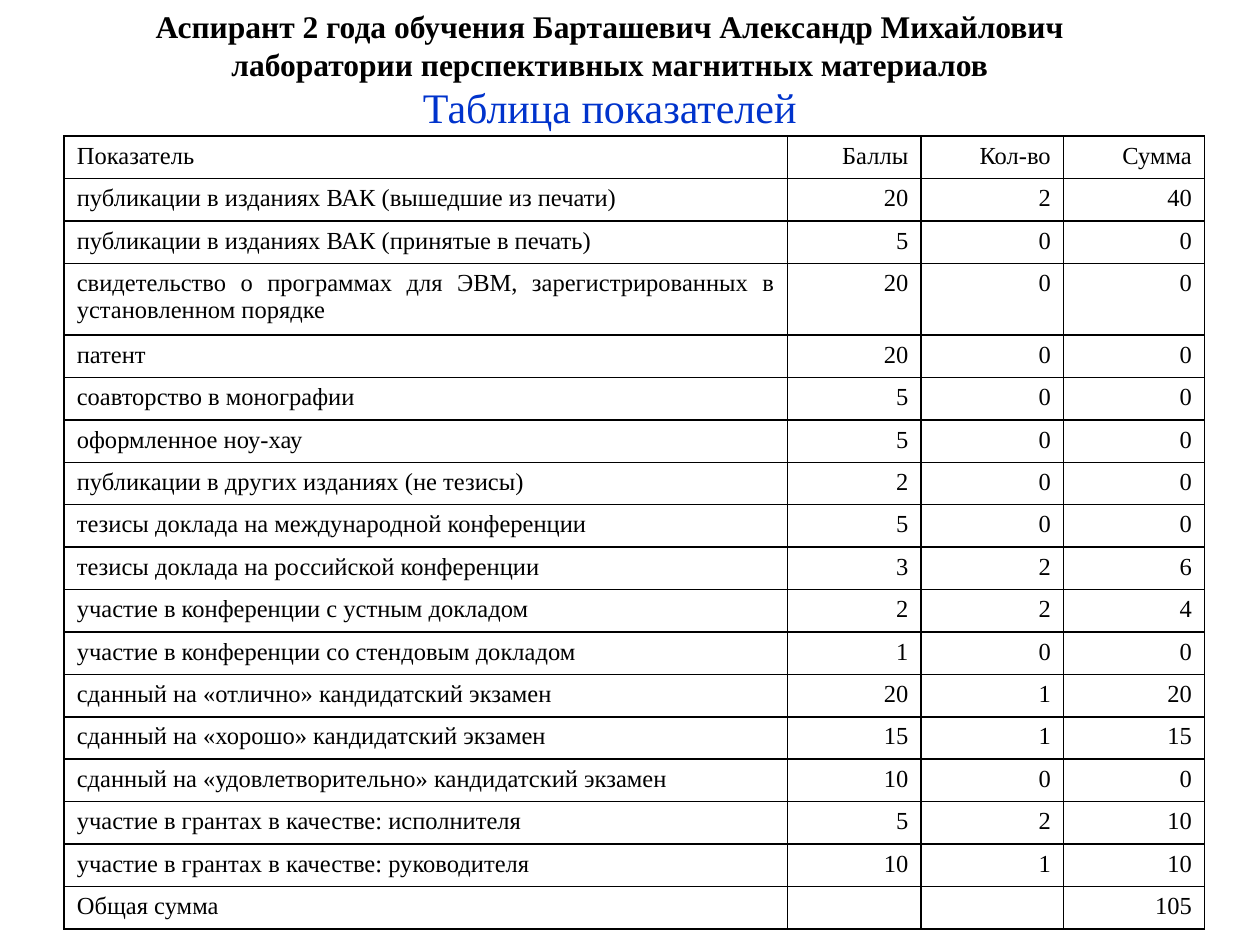
"""Build a slide with a postgraduate student's table of scores."""
from lxml import etree
from pptx import Presentation
from pptx.dml.color import RGBColor
from pptx.enum.text import MSO_ANCHOR, MSO_AUTO_SIZE, PP_ALIGN
from pptx.oxml.ns import qn
from pptx.util import Inches, Pt

LEFT, MID, RIGHT = PP_ALIGN.JUSTIFY, PP_ALIGN.CENTER, PP_ALIGN.RIGHT
CENTER = MSO_ANCHOR.MIDDLE
FIXED = MSO_AUTO_SIZE.NONE
FONT = "Times New Roman"
COLORS = {"text": "000000", "blue": "0033CC", "line": "000000"}

TITLE = [
    "Аспирант 2 года обучения Барташевич Александр Михайлович",
    "лаборатории перспективных магнитных материалов",
]
CAPTION = "Таблица показателей"
HEAD = ("Показатель", "Баллы", "Кол-во", "Сумма")
SCORES = [
    ("публикации в изданиях ВАК (вышедшие из печати)", 20, 2),
    ("публикации в изданиях ВАК (принятые в печать)", 5, 0),
    ("свидетельство о программах для ЭВМ, зарегистрированных в установленном порядке", 20, 0),
    ("патент", 20, 0),
    ("соавторство в монографии", 5, 0),
    ("оформленное ноу-хау", 5, 0),
    ("публикации в других изданиях (не тезисы)", 2, 0),
    ("тезисы доклада на международной конференции", 5, 0),
    ("тезисы доклада на российской конференции", 3, 2),
    ("участие в конференции с устным докладом", 2, 2),
    ("участие в конференции со стендовым докладом", 1, 0),
    ("сданный на «отлично» кандидатский экзамен", 20, 1),
    ("сданный на «хорошо» кандидатский экзамен", 15, 1),
    ("сданный на «удовлетворительно» кандидатский экзамен", 10, 0),
    ("участие в грантах в качестве: исполнителя", 5, 2),
    ("участие в грантах в качестве: руководителя", 10, 1),
]
TOTAL = "Общая сумма"
WIDTHS = (5.74, 1.06, 1.13, 1.12)
ROW, TALL, TALL_ROW = 0.337, 0.57, 3


def add_run(para, text, size, color, bold=False):
    run = para.add_run()
    run.text = text
    font = run.font
    font.name, font.size, font.bold = FONT, Pt(size), bold
    font.color.rgb = RGBColor.from_string(COLORS[color])


def add_title(slide):
    title = slide.shapes.title
    title.left, title.top = Inches(0.59), Inches(0)
    title.width, title.height = Inches(8.5), Inches(0.71)
    frame = title.text_frame
    frame.auto_size, frame.vertical_anchor = FIXED, CENTER
    para = frame.paragraphs[0]
    para.alignment = MID
    for num, line in enumerate(TITLE):
        if num:
            para.add_line_break()
        add_run(para, line, 18, "text", True)


def add_caption(slide):
    box = slide.shapes.add_textbox(Inches(1.34), Inches(0.6), Inches(7), Inches(0.47))
    box.text_frame.word_wrap = True
    para = box.text_frame.paragraphs[0]
    para.alignment, para.space_before = MID, Pt(3)
    add_run(para, CAPTION, 24, "blue")


def add_borders(cell):
    props = cell._tc.get_or_add_tcPr()
    for num, side in enumerate(("lnL", "lnR", "lnT", "lnB")):
        line = etree.Element(qn(f"a:{side}"), w=str(Pt(1)))
        fill = etree.SubElement(line, qn("a:solidFill"))
        etree.SubElement(fill, qn("a:srgbClr"), val=COLORS["line"])
        props.insert(num, line)


def fill_cell(cell, text, align):
    cell.fill.background()
    add_borders(cell)
    para = cell.text_frame.paragraphs[0]
    para.alignment = align
    if text:
        add_run(para, text, 14, "text")
    else:
        etree.SubElement(para._p, qn("a:endParaRPr"), sz="1400")


def add_scores(slide):
    body = [(name, pts, count, pts * count) for name, pts, count in SCORES]
    rows = [HEAD, *body, (TOTAL, "", "", sum(row[-1] for row in body))]
    heights = [TALL if num == TALL_ROW else ROW for num in range(len(rows))]
    table = slide.shapes.add_table(
        len(rows), len(HEAD), Inches(0.51), Inches(1.08),
        Inches(sum(WIDTHS)), Inches(sum(heights))).table
    table.first_row = table.horz_banding = False
    for col, width in zip(table.columns, WIDTHS):
        col.width = Inches(width)
    for line, height, row in zip(table.rows, heights, rows):
        line.height = Inches(height)
        for num, value in enumerate(row):
            fill_cell(line.cells[num], str(value), RIGHT if num else LEFT)


def main():
    deck = Presentation()
    deck.slide_width, deck.slide_height = Inches(10), Inches(7.5)
    slide = deck.slides.add_slide(deck.slide_layouts[5])
    add_title(slide)
    add_caption(slide)
    add_scores(slide)
    deck.save("out.pptx")


if __name__ == "__main__":
    main()
